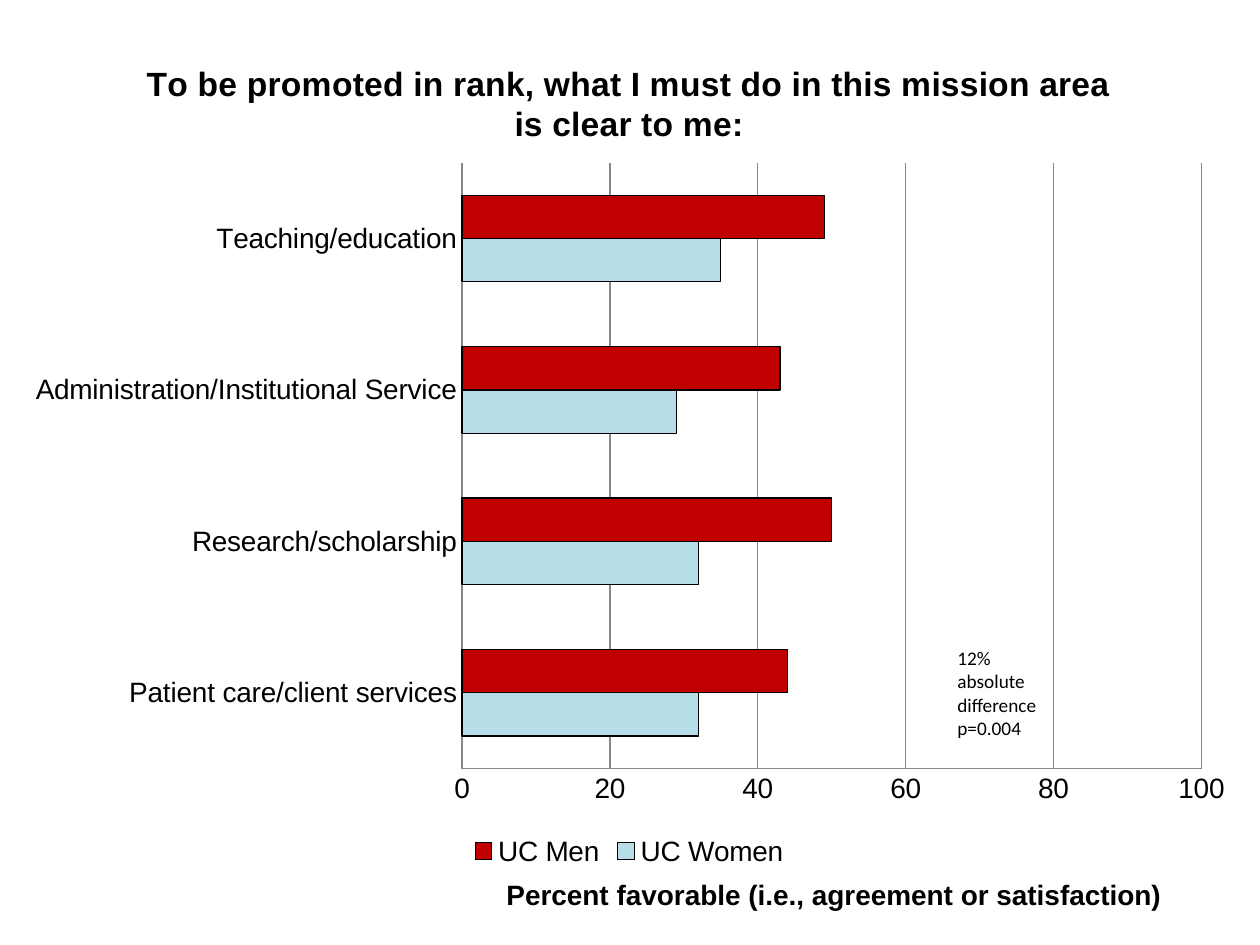
from dataclasses import dataclass

import lxml.etree
import pptx
import pptx.chart.data
import pptx.dml.color
import pptx.enum.chart
import pptx.oxml.ns
import pptx.util

Cm = pptx.util.Cm
Pt = pptx.util.Pt
RGB = pptx.dml.color.RGBColor.from_string


@dataclass(frozen=True)
class Theme:
    text: RGB = RGB("000000")
    grid: RGB = RGB("878787")
    women: RGB = RGB("B7DEE8")
    men: RGB = RGB("C00000")
    chart_font: str = "Arial"
    note_font: str = "Calibri"
    title: Pt = Pt(19.2)
    body: Pt = Pt(16)
    note: Pt = Pt(11)


THEME = Theme()
TITLE = "To be promoted in rank, what I must do in this mission area is clear to me:"
CATEGORIES = [
    "Patient care/client services",
    "Research/scholarship",
    "Administration/Institutional Service",
    "Teaching/education",
]
SERIES = [
    ("UC Women", (32, 32, 29, 35), THEME.women),
    ("UC Men", (44, 50, 43, 49), THEME.men),
]


def style_font(font, size, name, bold=False):
    font.size, font.name, font.bold = size, name, bold
    font.color.rgb = THEME.text


def set_plot_layout(chart, x, y, w, h):
    """Fix the inner plot area as fractions of the chart frame."""
    qn = pptx.oxml.ns.qn
    plot_area = chart.element.find(".//" + qn("c:plotArea"))
    for old in plot_area.findall(qn("c:layout")):
        plot_area.remove(old)
    layout = lxml.etree.Element(qn("c:layout"))
    manual = lxml.etree.SubElement(layout, qn("c:manualLayout"))
    settings = {"layoutTarget": "inner", "xMode": "edge", "yMode": "edge",
                "x": x, "y": y, "w": w, "h": h}
    for tag, value in settings.items():
        lxml.etree.SubElement(manual, qn("c:" + tag)).set("val", str(value))
    plot_area.insert(0, layout)


def style_axes(chart):
    values = chart.value_axis
    values.minimum_scale, values.maximum_scale, values.major_unit = 0, 100, 20
    values.has_major_gridlines = True
    values.tick_labels.number_format = "#,##0"
    values.tick_labels.number_format_is_linked = False
    for axis in (chart.category_axis, values):
        axis.major_tick_mark = pptx.enum.chart.XL_TICK_MARK.NONE
        axis.minor_tick_mark = pptx.enum.chart.XL_TICK_MARK.NONE
    for fmt in (chart.category_axis.format, values.format, values.major_gridlines.format):
        fmt.line.color.rgb = THEME.grid
        fmt.line.width = Pt(0.75)


def add_bar_chart(slide, left, top, width, height):
    data = pptx.chart.data.CategoryChartData()
    data.categories = CATEGORIES
    for name, values, _ in SERIES:
        data.add_series(name, values)
    kind = pptx.enum.chart.XL_CHART_TYPE.BAR_CLUSTERED
    chart = slide.shapes.add_chart(kind, left, top, width, height, data).chart
    style_font(chart.font, THEME.body, THEME.chart_font)

    chart.has_title = True
    p = chart.chart_title.text_frame.paragraphs[0]
    p.text = TITLE
    style_font(p.font, THEME.title, THEME.chart_font, bold=True)
    chart.chart_title.include_in_layout = False

    chart.has_legend = True
    chart.legend.position = pptx.enum.chart.XL_LEGEND_POSITION.BOTTOM
    chart.legend.include_in_layout = False

    plot = chart.plots[0]
    plot.gap_width = 150
    plot.vary_by_categories = False
    for series, (_, _, color) in zip(plot.series, SERIES):
        series.format.fill.solid()
        series.format.fill.fore_color.rgb = color
        series.format.line.color.rgb = THEME.text
        series.format.line.width = Pt(0.75)
    style_axes(chart)
    set_plot_layout(chart, 0.365, 0.156, 0.597, 0.721)


def add_text(slide, left, top, width, height, lines, size, font, bold=False):
    tf = slide.shapes.add_textbox(left, top, width, height).text_frame
    tf.word_wrap = True
    tf.text = "\n".join(lines)
    for p in tf.paragraphs:
        style_font(p.font, size, font, bold)


def main():
    prs = pptx.Presentation()
    prs.slide_width, prs.slide_height = Cm(25.4), Cm(19.05)
    slide = prs.slides.add_slide(prs.slide_layouts[6])
    add_bar_chart(slide, Cm(0.2), Cm(0.64), Cm(24.97), Cm(16.94))
    add_text(slide, Cm(9.96), Cm(17.57), Cm(14.6), Cm(0.94),
             ["Percent favorable (i.e., agreement or satisfaction)"],
             THEME.body, THEME.chart_font, bold=True)
    add_text(slide, Cm(19.05), Cm(12.91), Cm(2.34), Cm(2.13),
             ["12% absolute difference", "p=0.004"], THEME.note, THEME.note_font)
    prs.save("out.pptx")


if __name__ == "__main__":
    main()
